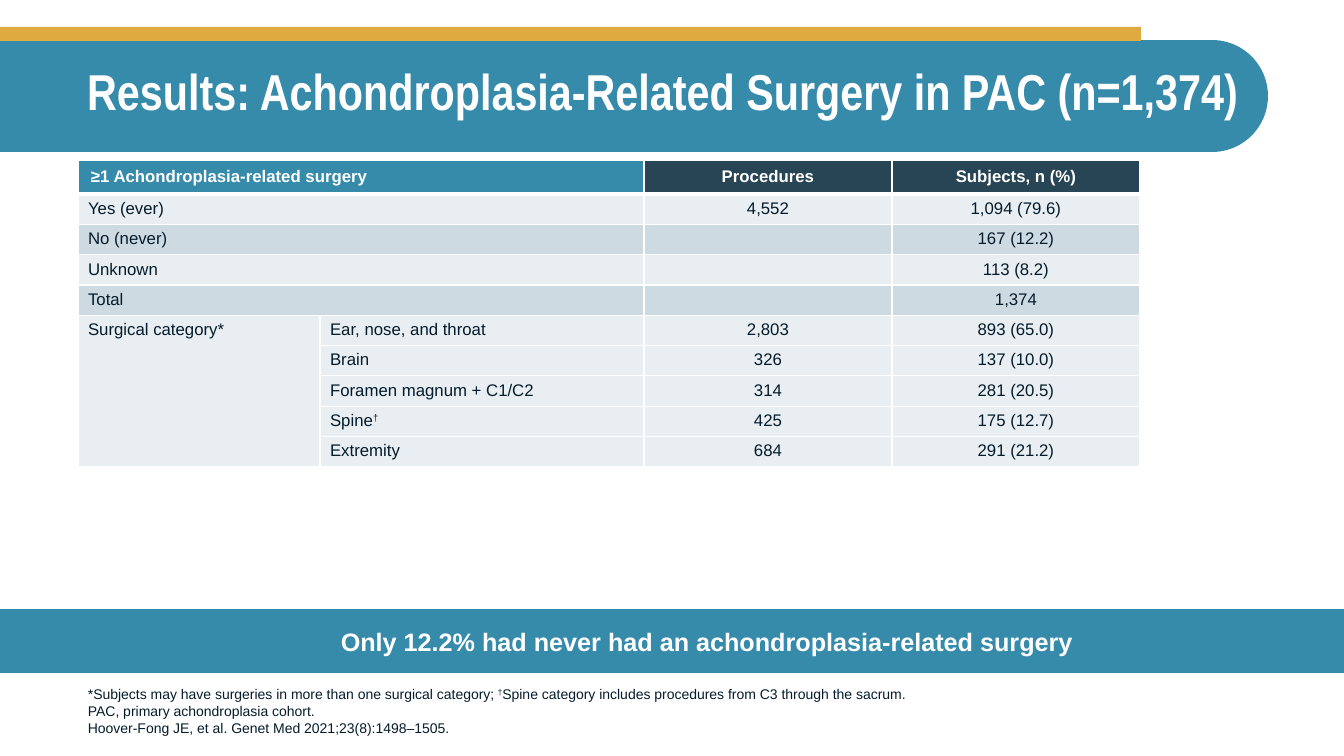
from lxml import etree
from pptx import Presentation
from pptx.dml.color import RGBColor
from pptx.enum.shapes import MSO_SHAPE as SHAPE
from pptx.enum.text import MSO_ANCHOR as ANCHOR, MSO_AUTO_SIZE as AUTO, PP_ALIGN as ALIGN
from pptx.oxml.ns import qn
from pptx.util import Pt

COLORS = {"teal": "368BAB", "gold": "DFAA40", "navy": "274554", "ink": "051C2C",
          "white": "FFFFFF", "light": "E8EEF1", "mid": "CEDAE2"}

TITLE = "Results: Achondroplasia-Related Surgery in PAC (n=1,374)"
MESSAGE = "Only 12.2% had never had an achondroplasia-related surgery"
FOOTNOTES = [
    "*Subjects may have surgeries in more than one surgical category; "
    "†Spine category includes procedures from C3 through the sacrum.",
    "PAC, primary achondroplasia cohort.",
    "Hoover-Fong JE, et al. Genet Med 2021;23(8):1498–1505.",
]
ROWS = [
    ("≥1 Achondroplasia-related surgery", "", "Procedures", "Subjects, n (%)"),
    ("Yes (ever)", "", "4,552", "1,094 (79.6)"),
    ("No (never)", "", "", "167 (12.2)"),
    ("Unknown", "", "", "113 (8.2)"),
    ("Total", "", "", "1,374"),
    ("Surgical category*", "Ear, nose, and throat", "2,803", "893 (65.0)"),
    ("", "Brain", "326", "137 (10.0)"),
    ("", "Foramen magnum + C1/C2", "314", "281 (20.5)"),
    ("", "Spine†", "425", "175 (12.7)"),
    ("", "Extremity", "684", "291 (21.2)"),
]
COL_WIDTHS = [242, 324, 248, 248]
HEADER_HEIGHT, ROW_HEIGHT = 32, 28
CATEGORY_ROW = 5  # first row of the surgical categories
SLIDE_W, SLIDE_H = 1344, 756


def px(n):
    return round(n * 914400 / 100.8)


def rgb(name):
    return RGBColor.from_string(COLORS[name])


def write(p, text, size, color, bold=False, align=ALIGN.LEFT, font="Arial"):
    """Fill a paragraph, raising each dagger to superscript."""
    before, dagger, after = text.partition("†")
    for part in (before, dagger, after):
        if part:
            r = p.add_run()
            r.text = part
            if part == "†":
                r._r.get_or_add_rPr().set("baseline", "30000")
    if not text:
        end = etree.SubElement(p._p, qn("a:endParaRPr"))
        end.set("sz", str(size * 100))
    p.alignment = align
    p.font.name, p.font.size, p.font.bold = font, Pt(size), bold
    p.font.color.rgb = rgb(color)


def add_block(slide, shape, x, y, w, h, color):
    sp = slide.shapes.add_shape(shape, px(x), px(y), px(w), px(h))
    sp.shadow.inherit = False
    sp.fill.solid()
    sp.fill.fore_color.rgb = rgb(color)
    sp.line.fill.background()
    return sp


def set_borders(cell, top, bottom):
    """Draw white cell borders, with top and bottom widths in points."""
    tcPr = cell._tc.get_or_add_tcPr()
    for tag, width in (("lnL", 1), ("lnR", 1), ("lnT", top), ("lnB", bottom)):
        ln = etree.SubElement(tcPr, qn(f"a:{tag}"), w=str(Pt(width)))
        fill = etree.SubElement(ln, qn("a:solidFill"))
        etree.SubElement(fill, qn("a:srgbClr"), val=COLORS["white"])


def cell_color(row, col):
    if row == 0:
        return "teal" if col < 2 else "navy"
    return "mid" if row < CATEGORY_ROW and row % 2 == 0 else "light"


def add_header(slide):
    # The banner stands upright and is turned so its rounded end points right.
    banner = add_block(slide, SHAPE.ROUND_2_SAME_RECTANGLE, 578, -538, 112, 1268, "teal")
    banner.adjustments[0], banner.adjustments[1] = 0, 0.5
    banner.rotation = 270
    add_block(slide, SHAPE.RECTANGLE, 0, 27, 1141, 14, "gold")
    title = slide.shapes.title
    title.left, title.top, title.width, title.height = px(77), px(39), px(1190), px(111)
    tf = title.text_frame
    tf.auto_size, tf.vertical_anchor = AUTO.NONE, ANCHOR.MIDDLE
    p = tf.paragraphs[0]
    p.line_spacing = 0.9
    write(p, TITLE, 36, "white", True, font="Arial Narrow")
    slide.shapes._spTree.append(title._element)  # bring in front of the banner


def add_surgery_table(slide):
    height = HEADER_HEIGHT + ROW_HEIGHT * (len(ROWS) - 1)
    table = slide.shapes.add_table(len(ROWS), len(COL_WIDTHS), px(78), px(160),
                                   px(sum(COL_WIDTHS)), px(height)).table
    table.first_row = table.horz_banding = False
    for column, width in zip(table.columns, COL_WIDTHS):
        column.width = px(width)
    for i, values in enumerate(ROWS):
        header = i == 0
        table.rows[i].height = px(HEADER_HEIGHT if header else ROW_HEIGHT)
        for j, text in enumerate(values):
            cell = table.cell(i, j)
            set_borders(cell, 3 if i == 1 else 1, 3 if header else 1)
            cell.fill.solid()
            cell.fill.fore_color.rgb = rgb(cell_color(i, j))
            if header:
                cell.vertical_anchor = ANCHOR.MIDDLE
                cell.margin_left = cell.margin_right = px(13)
                cell.margin_top = cell.margin_bottom = px(7)
            write(cell.text_frame.paragraphs[0], text, 12, "white" if header else "ink",
                  header, ALIGN.CENTER if j > 1 else ALIGN.LEFT)
    for i in range(CATEGORY_ROW):
        table.cell(i, 0).merge(table.cell(i, 1))
    table.cell(CATEGORY_ROW, 0).merge(table.cell(len(ROWS) - 1, 0))


def add_message(slide):
    bar = add_block(slide, SHAPE.RECTANGLE, 0, 609, SLIDE_W, 64, "teal")
    tf = bar.text_frame
    tf.word_wrap, tf.vertical_anchor = True, ANCHOR.MIDDLE
    tf.margin_left = tf.margin_right = px(80)
    p = tf.paragraphs[0]
    p._p.get_or_add_pPr().set("marL", str(px(70)))
    write(p, MESSAGE, 18, "white", True, ALIGN.CENTER)


def add_footnotes(slide):
    tf = slide.shapes.add_textbox(px(78), px(676), px(996), px(65)).text_frame
    tf.word_wrap, tf.vertical_anchor = True, ANCHOR.BOTTOM
    for i, note in enumerate(FOOTNOTES):
        write(tf.add_paragraph() if i else tf.paragraphs[0], note, 10, "ink")


def main():
    prs = Presentation()
    prs.slide_width, prs.slide_height = px(SLIDE_W), px(SLIDE_H)
    slide = prs.slides.add_slide(prs.slide_layouts[5])
    add_header(slide)
    add_footnotes(slide)
    add_message(slide)
    add_surgery_table(slide)
    prs.save("out.pptx")


if __name__ == "__main__":
    main()
